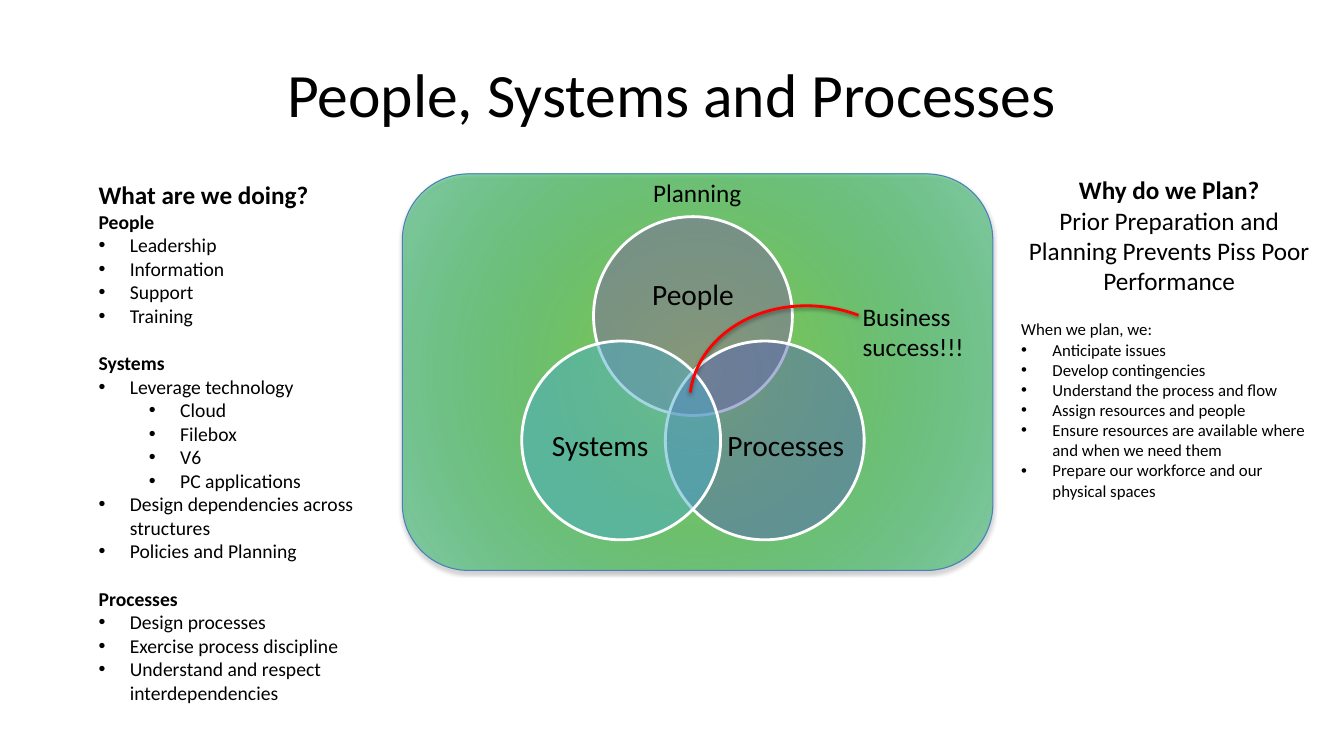
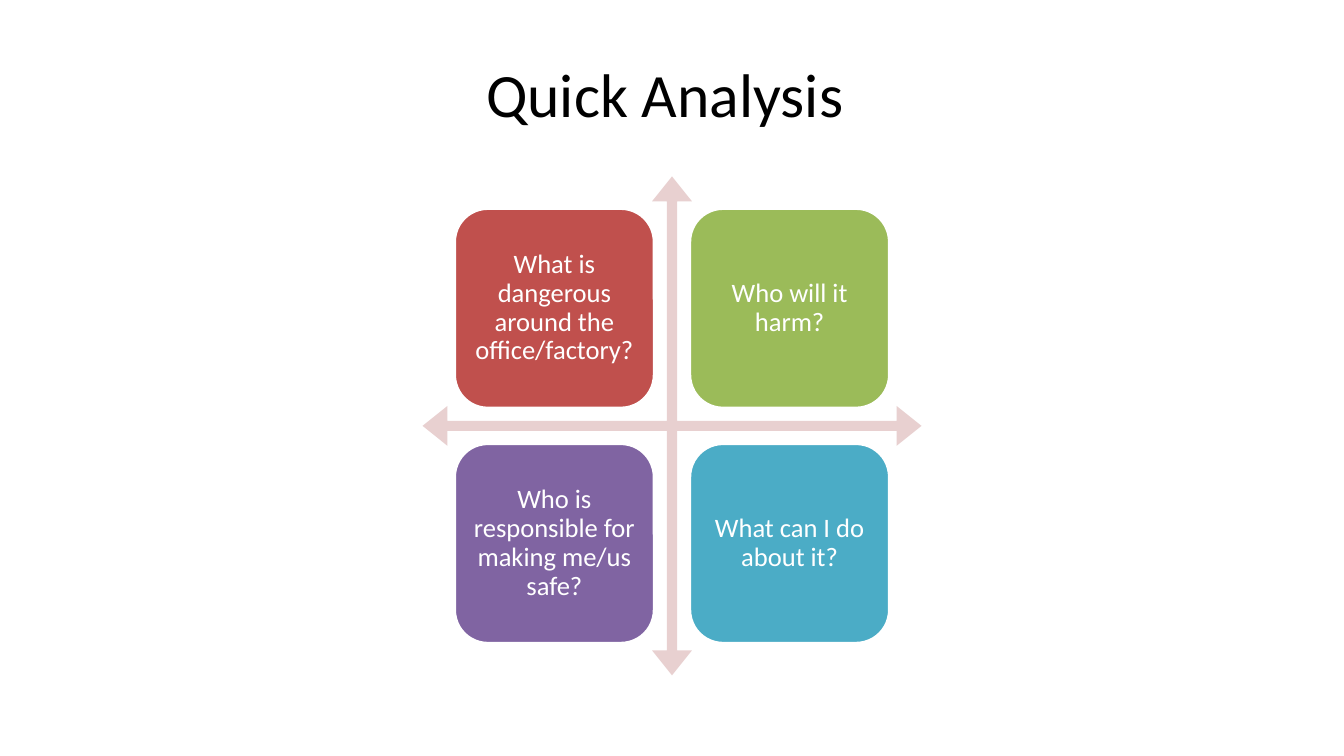
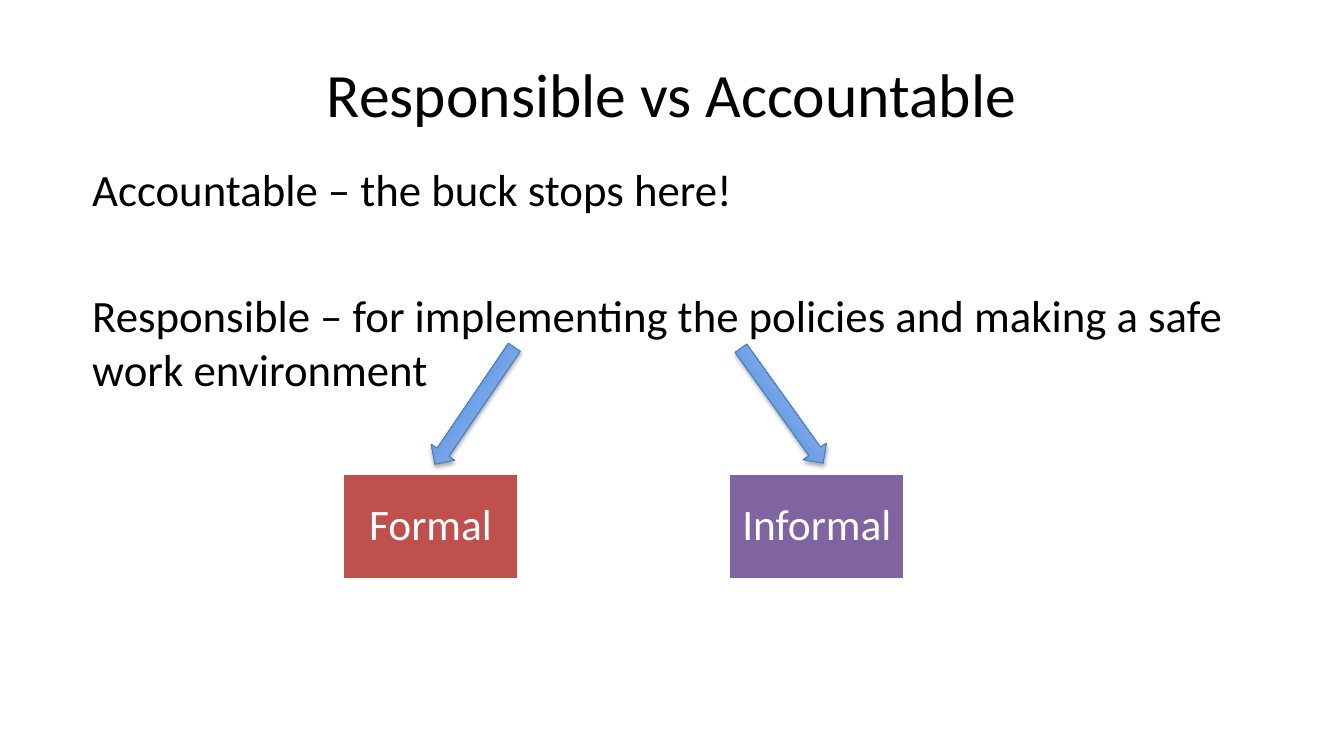
from dataclasses import dataclass
from math import cos, radians, sin

from lxml.etree import SubElement
from pptx import Presentation
from pptx.dml.color import RGBColor as Rgb
from pptx.enum.shapes import MSO_SHAPE as Shape
from pptx.enum.text import MSO_ANCHOR as Anchor, PP_ALIGN as Align
from pptx.oxml.ns import qn
from pptx.util import Emu, Inches, Pt

COLUMNS, ROWS = 160, 90


@dataclass(frozen=True)
class Theme:
    font: str = "Calibri"
    ink: str = "000000"
    paper: str = "FFFFFF"
    outline: str = "4B7EBC"
    red: str = "C0504D"
    green: str = "9BBB59"
    purple: str = "8064A2"
    teal: str = "4BACC6"
    indigo: str = "5767B4"
    accent: str = "FF0000"
    axes: str = "E8D0D0"
    panel: tuple = ("92D050", "00B050")
    arrow: tuple = ("3F80CE", "A4C4FF")
    title: int = 44
    body: int = 32
    box: int = 31
    circle: int = 21
    tile: int = 19
    lead: int = 18
    list: int = 14
    small: int = 12


THEME = Theme()


def write(frame, lines, size=THEME.lead, color=THEME.ink, align=Align.LEFT,
          anchor=Anchor.TOP, spacing=None, insets=(0.1, 0.05)):
    frame.word_wrap = True
    frame.vertical_anchor = anchor
    frame.margin_left = frame.margin_right = Inches(insets[0])
    frame.margin_top = frame.margin_bottom = Inches(insets[1])
    for index, line in enumerate(lines):
        text, look = (line, {}) if isinstance(line, str) else line
        paragraph = frame.paragraphs[0] if index == 0 else frame.add_paragraph()
        paragraph.alignment = align
        paragraph.line_spacing = spacing
        paragraph.space_before = Pt(look.get("before", 0))
        run = paragraph.add_run()
        run.text = text
        run.font.name = THEME.font
        run.font.size = Pt(look.get("size", size))
        run.font.bold = look.get("bold", False)
        run.font.color.rgb = Rgb.from_string(color)
        if "level" in look:
            paragraph.level = look["level"]
            properties = paragraph._p.get_or_add_pPr()
            properties.set("marL", str(Inches(0.31 + 0.5 * look["level"])))
            properties.set("indent", str(-Inches(0.31)))
            SubElement(properties, qn("a:buFont")).set("typeface", "Arial")
            SubElement(properties, qn("a:buChar")).set("char", "•")


def heading(text, **look):
    return text, dict(bold=True, **look)


def bullets(*texts, level=0):
    return [(text, {"level": level}) for text in texts]


def set_alpha(color, percent):
    SubElement(color, qn("a:alpha")).set("val", str(percent * 1000))


class Deck:
    def __init__(self, theme):
        self.theme = theme
        self.presentation = Presentation()
        self.presentation.slide_width = Inches(13.333)
        self.presentation.slide_height = Inches(7.5)
        self.slide = None

    def place(self, left, top, width, height):
        column = self.presentation.slide_width / COLUMNS
        row = self.presentation.slide_height / ROWS
        return [Emu(round(value)) for value in
                (left * column, top * row, width * column, height * row)]

    def new_slide(self, title):
        layout = self.presentation.slide_layouts[6]
        self.slide = self.presentation.slides.add_slide(layout)
        self.text((8, 3.6, 144, 15), [title], size=self.theme.title,
                  align=Align.CENTER, anchor=Anchor.MIDDLE)

    def text(self, area, lines, **look):
        box = self.slide.shapes.add_textbox(*self.place(*area))
        write(box.text_frame, lines, **look)

    def shape(self, kind, area, fill=None, alpha=None, line=None, width=2,
              rotation=0, adjust=()):
        shape = self.slide.shapes.add_shape(kind, *self.place(*area))
        shape.shadow.inherit = False
        shape.rotation = rotation
        for index, value in enumerate(adjust):
            shape.adjustments[index] = value
        if fill:
            shape.fill.solid()
            shape.fill.fore_color.rgb = Rgb.from_string(fill)
            if alpha:
                set_alpha(shape.element.spPr.find(".//" + qn("a:srgbClr")), alpha)
        else:
            shape.fill.background()
        if line:
            shape.line.color.rgb = Rgb.from_string(line)
            shape.line.width = Pt(width)
        else:
            shape.line.fill.background()
        return shape

    def labelled(self, kind, area, label, fill, size, inset):
        shape = self.shape(kind, area, fill, line=self.theme.paper)
        write(shape.text_frame, [label], size=size, color=self.theme.paper,
              align=Align.CENTER, anchor=Anchor.MIDDLE, spacing=0.9,
              insets=(inset, inset))

    def shadow(self, shape, alpha=35, distance=1.8):
        effects = shape.element.spPr.find(qn("a:effectLst"))
        outer = SubElement(effects, qn("a:outerShdw"), blurRad=str(Pt(3.1)),
                           dist=str(Pt(distance)), dir="5400000", rotWithShape="0")
        color = SubElement(outer, qn("a:srgbClr"), val=self.theme.ink)
        set_alpha(color, alpha)

    def gradient(self, kind, area, colors, radial_alpha=None, rotation=0):
        shape = self.shape(kind, area, line=self.theme.outline, width=0.75,
                           rotation=rotation)
        shape.fill.gradient()
        shape.fill.gradient_angle = 90
        for stop, position, color in zip(shape.fill.gradient_stops, (0, 1), colors):
            stop.position = position
            stop.color.rgb = Rgb.from_string(color)
        if radial_alpha:
            gradient = shape.element.spPr.find(qn("a:gradFill"))
            set_alpha(gradient.findall(".//" + qn("a:srgbClr"))[-1], radial_alpha)
            gradient.remove(gradient.find(qn("a:lin")))
            circle = SubElement(gradient, qn("a:path"))
            circle.set("path", "circle")
            SubElement(circle, qn("a:fillToRect"),
                       **dict.fromkeys("ltrb", "50000"))
        self.shadow(shape)

    def circle(self, center, diameter, label, nudge, fill):
        x, y = center
        self.shape(Shape.OVAL, (x - diameter / 2, y - diameter / 2, diameter, diameter),
                   fill, alpha=50, line=self.theme.paper)
        width, height = 17.3, 12
        self.text((x + nudge[0] - width / 2, y + nudge[1] - height / 2, width, height),
                  [label], size=self.theme.circle, align=Align.CENTER,
                  anchor=Anchor.MIDDLE, spacing=0.9, insets=(0, 0))


def people_systems_processes(deck):
    theme = deck.theme
    deck.new_slide("People, Systems and Processes")
    deck.gradient(Shape.ROUNDED_RECTANGLE, (47.9, 20.7, 70.3, 47.2), theme.panel,
                  radial_alpha=40)
    orbit = 9.87
    for label, angle, nudge, fill in (
            ("People", -90, (0, -2.4), theme.purple),
            ("Processes", 30, (2.5, 0.8), theme.indigo),
            ("Systems", 150, (-2.5, 0.8), theme.teal)):
        center = (82.5 + orbit * cos(radians(angle)), 47.5 + orbit * sin(radians(angle)))
        deck.circle(center, 23.67, label, nudge, fill)
    deck.text((101.5, 35.3, 17.2, 8.5), ["Business", "success!!!"])
    arc = deck.shape(Shape.ARC, (84.5, 34, 24.4, 29.3), line=theme.accent,
                     rotation=277.5, adjust=(162, 11.34))
    deck.shadow(arc, alpha=38, distance=1.6)
    deck.text((10.56, 20.76, 38.9, 67), [
        heading("What are we doing?", size=theme.lead),
        heading("People"),
        *bullets("Leadership", "Information", "Support", "Training"),
        heading("Systems", before=17),
        *bullets("Leverage technology"),
        *bullets("Cloud", "Filebox", "V6", "PC applications", level=1),
        *bullets("Design dependencies across structures", "Policies and Planning"),
        heading("Processes", before=17),
        *bullets("Design processes", "Exercise process discipline",
                 "Understand and respect interdependencies"),
    ], size=theme.list)
    deck.text((120.4, 20.2, 37.6, 15.7), [
        heading("Why do we Plan?"),
        "Prior Preparation and Planning Prevents Piss Poor Performance",
    ], align=Align.CENTER)
    deck.text((59.9, 20.5, 46.2, 4.8), ["Planning"], align=Align.CENTER)
    deck.text((120.4, 37.4, 37.6, 23), [
        "When we plan, we:",
        *bullets("Anticipate issues", "Develop contingencies",
                 "Understand the process and flow", "Assign resources and people",
                 "Ensure resources are available where and when we need them",
                 "Prepare our workforce and our physical spaces"),
    ], size=theme.small)


def quick_analysis(deck):
    theme = deck.theme
    deck.new_slide("Quick Analysis ")
    middle_x, middle_y, span, tile, pitch = 80, 50.7, 59.4, 23.76, 28
    deck.shape(Shape.QUAD_ARROW,
               (middle_x - span / 2, middle_y - span / 2, span, span),
               theme.axes, adjust=(0.02, 0.04, 0.05))
    questions = (
        ("What is dangerous around the office/factory?", theme.red),
        ("Who will it harm?", theme.green),
        ("Who is responsible for making me/us safe?", theme.purple),
        ("What can I do about it?", theme.teal))
    for index, (question, fill) in enumerate(questions):
        row, column = divmod(index, 2)
        left = middle_x + (column - 0.5) * pitch - tile / 2
        top = middle_y + (row - 0.5) * pitch - tile / 2
        deck.labelled(Shape.ROUNDED_RECTANGLE, (left, top, tile, tile), question,
                      fill, theme.tile, 0.08)


def responsible_accountable(deck):
    theme = deck.theme
    deck.new_slide("Responsible vs Accountable")
    deck.text((9.8, 18.6, 144, 59.4), [
        ("Accountable – the buck stops here!", {"before": 6.4}),
        ("Responsible – for implementing the policies and making a safe work environment",
         {"before": 51.8}),
    ], size=theme.body)
    for label, fill, box_left, arrow_left, rotation in (
            ("Formal", theme.red, 40.8, 48.1, 124.2),
            ("Informal", theme.purple, 86.8, 84.7, 54.4)):
        deck.labelled(Shape.RECTANGLE, (box_left, 56.4, 20.9, 12.6), label, fill,
                      theme.box, 0.1)
        deck.gradient(Shape.RIGHT_ARROW, (arrow_left, 46.6, 16.8, 3.4), theme.arrow,
                      rotation=rotation)


def main():
    deck = Deck(THEME)
    for build in (people_systems_processes, quick_analysis, responsible_accountable):
        build(deck)
    deck.presentation.save("out.pptx")


if __name__ == "__main__":
    main()
